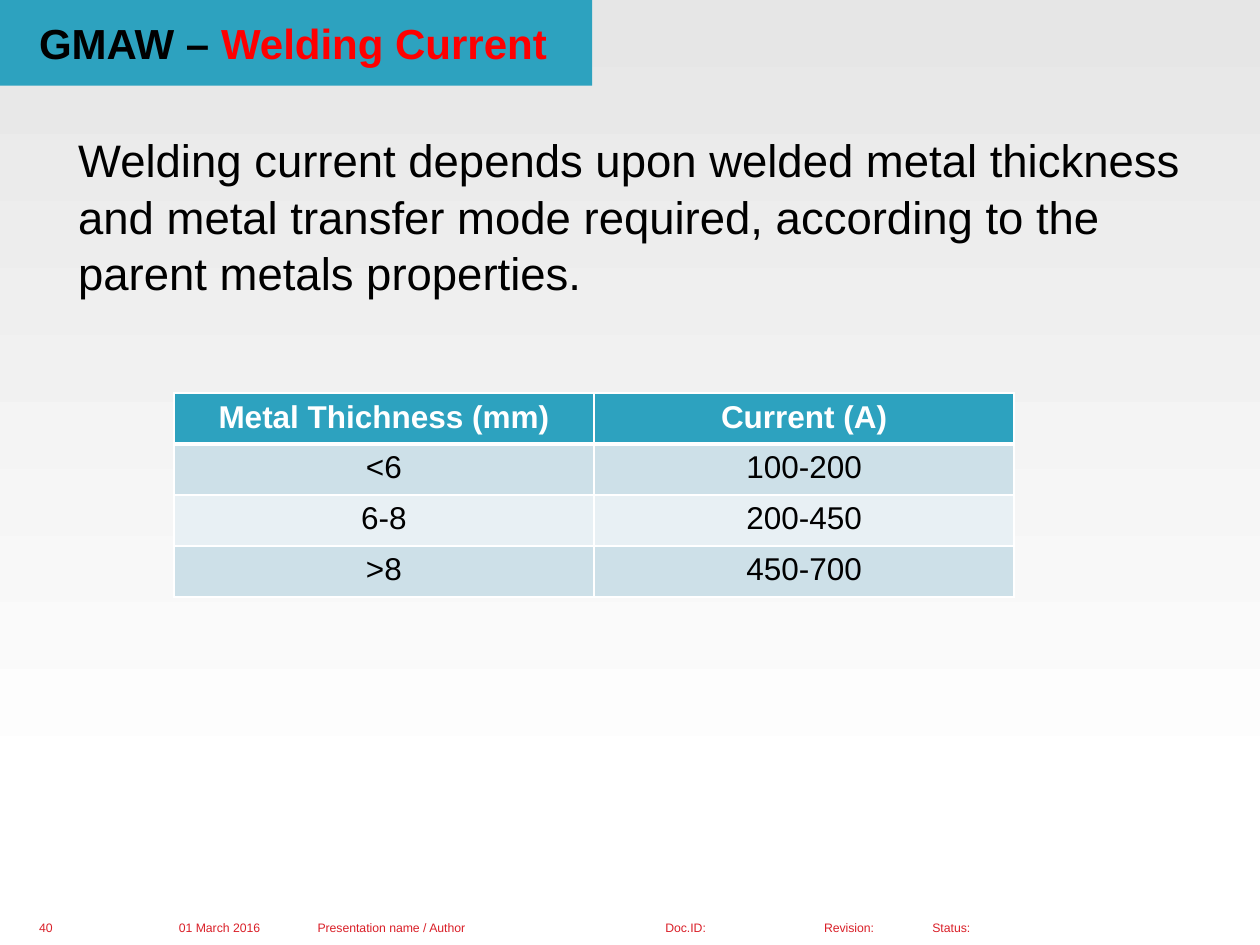
from lxml import etree
from pptx import Presentation
from pptx.dml.color import RGBColor
from pptx.enum.text import MSO_ANCHOR, MSO_AUTO_SIZE, PP_ALIGN
from pptx.oxml.ns import qn
from pptx.util import Inches, Pt

TITLE_ONLY = 5
LEFT, CENTER = PP_ALIGN.LEFT, PP_ALIGN.CENTER
TOP, MIDDLE = MSO_ANCHOR.TOP, MSO_ANCHOR.MIDDLE
NO_AUTOFIT = MSO_AUTO_SIZE.NONE
COLORS = {
    "teal": "2DA2BF", "red": "FF0000", "footer": "DA1F28",
    "black": "000000", "white": "FFFFFF", "gray": "E6E6E6",
    "band_dark": "CDE0E8", "band_light": "E8F0F4",
}
FOOTERS = [  # text, left, width, wrap
    ("40", 0.27, 0.39, True),
    ("01 March 2016", 1.38, 1.1, True),
    ("Presentation name / Author", 2.48, 2.68, True),
    ("Doc.ID:", 5.24, 0.39, False),
    ("Revision:", 6.5, 0.47, False),
    ("Status:", 7.36, 0.39, False),
]
CURRENTS = [
    ("Metal Thichness (mm)", "Current (A)"),
    ("<6", "100-200"),
    ("6-8", "200-450"),
    (">8", "450-700"),
]


def rgb(name):
    return RGBColor.from_string(COLORS[name])


def add_text(paragraph, text, size, color="black", bold=False, align=LEFT):
    paragraph.alignment = align
    run = paragraph.add_run()
    run.text = text
    font = run.font
    font.name, font.size, font.bold = "Arial", Pt(size), bold
    font.color.rgb = rgb(color)


def set_frame(frame, insets, anchor=TOP, wrap=True):
    """Set the insets (left, top, right, bottom in inches), anchor and wrap."""
    frame.auto_size = NO_AUTOFIT
    frame.word_wrap = wrap
    frame.vertical_anchor = anchor
    (frame.margin_left, frame.margin_top,
     frame.margin_right, frame.margin_bottom) = map(Inches, insets)


def add_box(slide, left, top, width, height):
    return slide.shapes.add_textbox(
        Inches(left), Inches(top), Inches(width), Inches(height)).text_frame


def set_background(slide):
    fill = slide.background.fill
    fill.gradient()
    fill.gradient_angle = 270
    for stop, color, position in zip(fill.gradient_stops, ("gray", "white"), (0, 0.85)):
        stop.color.rgb = rgb(color)
        stop.position = position


def set_title(slide):
    title = slide.shapes.title
    title.left, title.top = Inches(0), Inches(0)
    title.width, title.height = Inches(4.7), Inches(0.68)
    title.fill.solid()
    title.fill.fore_color.rgb = rgb("teal")
    set_frame(title.text_frame, (0.31, 0.14, 0.31, 0.14), wrap=False)
    heading = title.text_frame.paragraphs[0]
    add_text(heading, "GMAW – ", 24, bold=True)
    add_text(heading, "Welding Current", 24, color="red", bold=True)


def add_body(slide):
    frame = add_box(slide, 0.28, 0.99, 9.45, 1.6)
    set_frame(frame, (0.34, 0.04, 0.04, 0.04))
    paragraph = frame.paragraphs[0]
    paragraph.line_spacing = 1.04
    add_text(paragraph, "Welding current depends upon welded metal thickness and "
             "metal transfer mode required, according to the parent metals "
             "properties.", 26)


def set_borders(cell, bottom, top):
    properties = cell._tc.get_or_add_tcPr()
    sides = (("a:lnL", 1), ("a:lnR", 1), ("a:lnT", top), ("a:lnB", bottom))
    for index, (tag, points) in enumerate(sides):
        line = etree.Element(qn(tag), w=str(Pt(points)))
        solid = etree.SubElement(line, qn("a:solidFill"))
        etree.SubElement(solid, qn("a:srgbClr"), val=COLORS["white"])
        properties.insert(index, line)


def add_current_table(slide):
    table = slide.shapes.add_table(
        len(CURRENTS), 2, Inches(1.38), Inches(3.12), Inches(6.67), Inches(1.62)).table
    for row, values in enumerate(CURRENTS):
        header = row == 0
        band = "teal" if header else "band_dark" if row % 2 else "band_light"
        for column, value in enumerate(values):
            cell = table.cell(row, column)
            cell.fill.solid()
            cell.fill.fore_color.rgb = rgb(band)
            set_borders(cell, bottom=3 if header else 1, top=3 if row == 1 else 1)
            add_text(cell.text_frame.paragraphs[0], value, 18,
                     color="white" if header else "black", bold=header, align=CENTER)


def add_footers(slide):
    for text, left, width, wrap in FOOTERS:
        frame = add_box(slide, left, 7.29, width, 0.16)
        set_frame(frame, (0.04, 0.04, 0.04, 0.06), anchor=MIDDLE, wrap=wrap)
        add_text(frame.paragraphs[0], text, 7, color="footer")


def main():
    presentation = Presentation()
    presentation.slide_width, presentation.slide_height = Inches(10), Inches(7.5)
    slide = presentation.slides.add_slide(presentation.slide_layouts[TITLE_ONLY])
    set_background(slide)
    set_title(slide)
    add_body(slide)
    add_current_table(slide)
    add_footers(slide)
    presentation.save("out.pptx")


if __name__ == "__main__":
    main()
